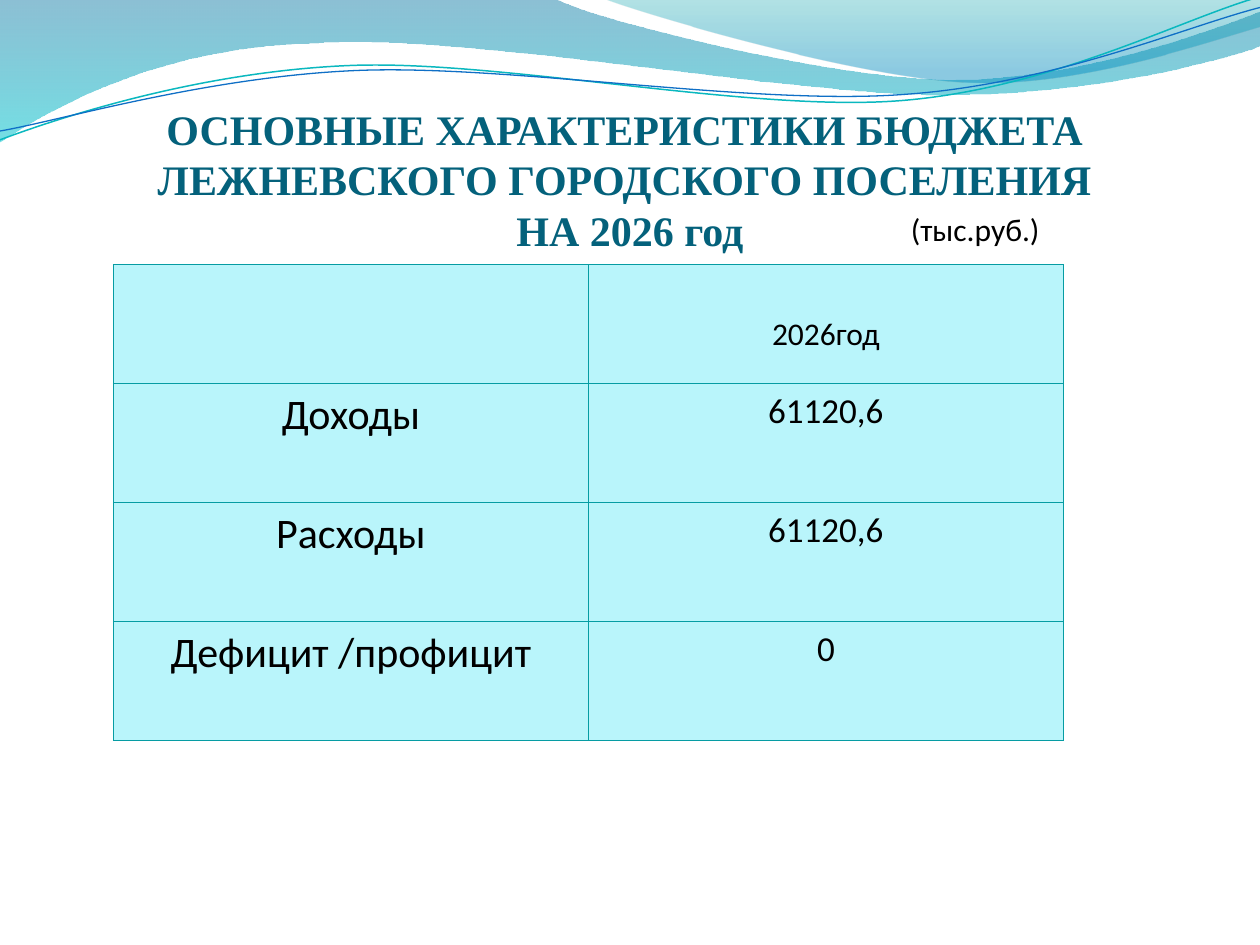
from dataclasses import dataclass
from itertools import product
from math import cos, radians, sin
from lxml.etree import SubElement
from pptx import Presentation
from pptx.dml.color import RGBColor
from pptx.enum.text import MSO_ANCHOR as Anchor, MSO_AUTO_SIZE as Fit, PP_ALIGN as Align
from pptx.oxml.ns import qn
from pptx.shapes.autoshape import Shape
from pptx.shapes.shapetree import SlideShapes as Shapes
from pptx.table import _Cell as Cell
from pptx.text.text import TextFrame as Frame
from pptx.util import Inches, Pt

Point = tuple[float, float]
TILT = 2.7
TEAL = "069CA3"
PALE = "B9F5FB"


@dataclass
class Stop:
    place: float
    color: str
    alpha: int


@dataclass
class Band:
    edges: list[list[Point]]
    stops: list[Stop]


@dataclass
class Wave:
    curve: list[Point]
    center: Point
    color: str
    width: float


@dataclass
class Row:
    label: str
    value: str


BANDS = [
    Band([[(0, 0)],
          [(4.4, -0.01), (4.76, 0.17), (6.64, 0.63), (7.58, 0.63),
           (8.53, 0.63), (9.58, 0.26), (10, 0.09)],
          [(10.01, 0.36), (9.83, 0.44), (8.7, 0.76), (7.46, 0.75),
           (6.22, 0.75), (3.82, 0.28), (2.57, 0.34),
           (1.29, 0.36), (0.46, 0.83), (-0.01, 1.13)]],
         [Stop(0, "0074A1", 45), Stop(1, "00C6CF", 55)]),
    Band([[(4.79, -0.01), (5.09, 0.11), (6.82, 0.62), (7.69, 0.65),
           (8.56, 0.69), (9.61, 0.32), (10, 0.21)],
          [(10, 0)]],
         [Stop(0, "00A1A9", 30), Stop(0.8, "008BBF", 45)]),
]
WAVES = [
    Wave([(0, 1.11), (0.48, 0.93), (1.58, 0.57), (2.77, 0.52),
          (3.95, 0.47), (5.93, 0.89), (7.13, 0.8),
          (8.33, 0.71), (9.38, 0.15), (9.98, -0.02)],
         (4.99, 0.57), "0AB8BF", 0.85),
    Wave([(0, 1.04), (0.47, 0.96), (1.64, 0.61), (2.83, 0.56),
          (4.03, 0.51), (5.97, 0.84), (7.17, 0.75),
          (8.36, 0.67), (9.41, 0.21), (10, 0.06)],
         (5, 0.59), "0F6FC6", 0.75),
]
ROWS = [
    Row("", "2026год"),
    Row("Доходы", "61120,6"),
    Row("Расходы", "61120,6"),
    Row("Дефицит /профицит", "0"),
]
TITLE = ("ОСНОВНЫЕ ХАРАКТЕРИСТИКИ БЮДЖЕТА \v"
         "ЛЕЖНЕВСКОГО ГОРОДСКОГО ПОСЕЛЕНИЯ \v"
         "НА 2026 год")


def paint(code: str) -> RGBColor:
    return RGBColor.from_string(code)


def write(frame: Frame, text: str, *, size: float, font: str = "Calibri",
          color: str = "000000", bold: bool = False,
          align: Align = Align.CENTER, lead: float | None = None) -> None:
    para = frame.paragraphs[0]
    para.text = text
    para.alignment = align
    if lead:
        para.line_spacing = Pt(lead)
    for run in para.runs:
        run.font.size = Pt(size)
        run.font.name = font
        run.font.bold = bold
        run.font.color.rgb = paint(color)


def add_box(shapes: Shapes, left: float, top: float, width: float,
            height: float) -> Frame:
    frame = shapes.add_textbox(*map(Inches, (left, top, width, height))).text_frame
    frame.word_wrap = True
    return frame


def turn(point: Point, center: Point) -> Point:
    angle = radians(TILT)
    x, y = point[0] - center[0], point[1] - center[1]
    return (center[0] + x * cos(angle) - y * sin(angle),
            center[1] + x * sin(angle) + y * cos(angle))


def outline(shapes: Shapes, edges: list[list[Point]], close: bool) -> Shape:
    spots = [(Inches(x), Inches(y)) for edge in edges for x, y in edge]
    maker = shapes.build_freeform(*spots[0])
    maker.add_line_segments(spots[1:], close=close)
    shape = maker.convert_to_shape()
    shape.shadow.inherit = False
    marks = [next(shape.element.iter(qn("a:moveTo")))]
    marks += shape.element.iter(qn("a:lnTo"))
    start = 0
    for edge in edges:
        for i in range(start + 1, start + len(edge), 3):
            bend(marks[i:i + 3])
        start += len(edge)
    return shape


def bend(marks: list) -> None:
    home = marks[0].getparent()
    curve = home.makeelement(qn("a:cubicBezTo"))
    home.replace(marks[0], curve)
    for mark in marks:
        curve.append(mark[0])
    for mark in marks[1:]:
        home.remove(mark)


def add_band(shapes: Shapes, band: Band) -> None:
    shape = outline(shapes, band.edges, True)
    shape.line.fill.background()
    shape.fill.gradient()
    shape.fill.gradient_angle = 270
    for slot, stop in zip(shape.fill.gradient_stops, band.stops):
        slot.position = stop.place
        slot.color.rgb = paint(stop.color)
    tones = shape.element.spPr.iter(qn("a:srgbClr"))
    for tone, stop in zip(list(tones), band.stops):
        SubElement(tone, qn("a:alpha"), val=str(stop.alpha * 1000))


def add_wave(shapes: Shapes, wave: Wave) -> None:
    curve = [turn(point, wave.center) for point in wave.curve]
    shape = outline(shapes, [curve], False)
    shape.rotation = 360 - TILT
    shape.fill.background()
    shape.line.color.rgb = paint(wave.color)
    shape.line.width = Pt(wave.width)


def frame_cell(cell: Cell) -> None:
    props = cell._tc.get_or_add_tcPr()
    for side in ("lnL", "lnR", "lnT", "lnB"):
        line = SubElement(props, qn(f"a:{side}"), w=str(Pt(0.75)))
        fill = SubElement(line, qn("a:solidFill"))
        SubElement(fill, qn("a:srgbClr"), val=TEAL)
    cell.fill.solid()
    cell.fill.fore_color.rgb = paint(PALE)


def add_grid(shapes: Shapes, rows: list[Row]) -> None:
    place = map(Inches, (0.9, 2.1, 7.54, 3.78))
    table = shapes.add_table(len(rows), 2, *place).table
    table.first_row = table.horz_banding = False
    for i, j in product(range(len(rows)), range(2)):
        cell = table.cell(i, j)
        frame_cell(cell)
        text = rows[i].value if j else rows[i].label
        if text:
            size = 24 if j == 0 else 20 if i else 18
            write(cell.text_frame, text, size=size)
    table.cell(0, 1).margin_top = Inches(0.4)


def main() -> None:
    deck = Presentation()
    deck.slide_width, deck.slide_height = Inches(10), Inches(7.5)
    shapes = deck.slides.add_slide(deck.slide_layouts[6]).shapes
    for band in BANDS:
        add_band(shapes, band)
    for wave in WAVES:
        add_wave(shapes, wave)
    title = add_box(shapes, 0.5, 0.77, 9, 1.25)
    title.margin_left = title.margin_right = title.margin_bottom = 0
    title.vertical_anchor = Anchor.BOTTOM
    write(title, TITLE, size=24, font="Times New Roman", color="04617B",
          bold=True, lead=28.8)
    add_grid(shapes, ROWS)
    unit = add_box(shapes, 7.13, 1.62, 1.81, 0.4)
    unit.auto_size = Fit.SHAPE_TO_FIT_TEXT
    write(unit, "(тыс.руб.)", size=18, align=Align.LEFT)
    deck.save("out.pptx")


if __name__ == "__main__":
    main()
